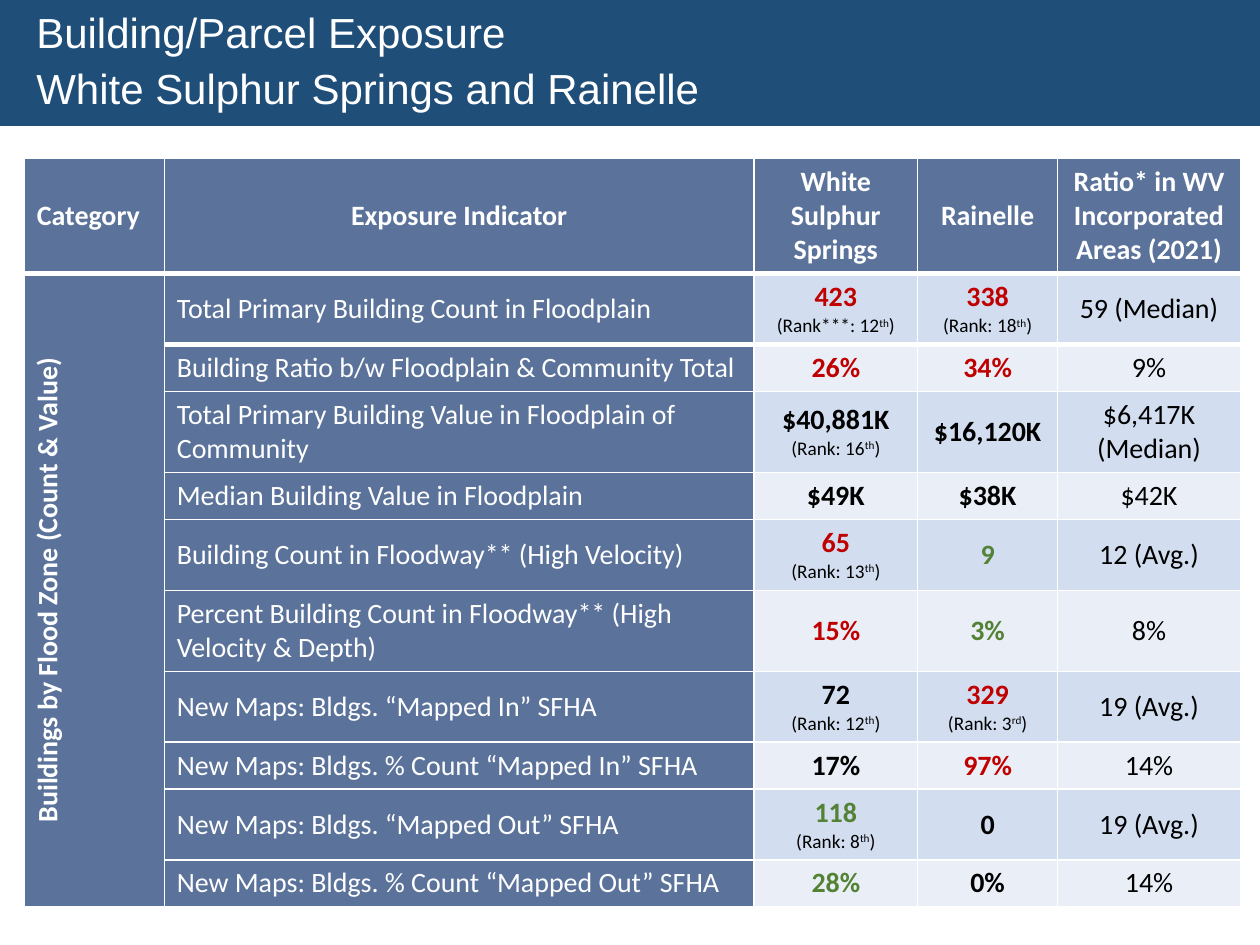
from dataclasses import dataclass

from lxml import etree
from pptx import Presentation, util as u
from pptx.dml import color
from pptx.enum import shapes, text
from pptx.oxml import ns


@dataclass(frozen=True)
class Theme:
    banner: str = "1F4E79"
    label: str = "5B739B"
    band: str = "D2DEEF"
    light: str = "EAEFF7"
    white: str = "FFFFFF"
    black: str = "000000"
    high: str = "C00000"
    low: str = "548235"
    title_size: int = 24
    body_size: int = 16
    rank_size: int = 11
    title_font: str = "Arial"
    body_font: str = "Calibri"


THEME = Theme()
NO_STYLE = "{2D5ABB26-0587-4C30-8999-92F81FD0307C}"
COLUMN_WIDTHS = (80, 337, 93.5, 80, 104.5)
HEADER_HEIGHT, RANK_HEIGHT, SINGLE_HEIGHT, DOUBLE_HEIGHT = 65.8, 40.5, 26.5, 46.3

TITLE = ("Building/Parcel Exposure", "White Sulphur Springs and Rainelle")
HEADERS = ("Category", "Exposure Indicator", "White Sulphur Springs", "Rainelle",
           "Ratio* in WV Incorporated Areas (2021)")
CATEGORY = "Buildings by Flood Zone (Count & Value)"
HIGH, LOW, PLAIN = THEME.high, THEME.low, THEME.black

# Row height, indicator, one (value, colour, rank) for each town, state ratio
INDICATORS = (
    (RANK_HEIGHT, "Total Primary Building Count in Floodplain",
     ("423", HIGH, "Rank***: 12th"), ("338", HIGH, "Rank: 18th"), "59 (Median)"),
    (SINGLE_HEIGHT, "Building Ratio b/w Floodplain & Community Total",
     ("26%", HIGH, ""), ("34%", HIGH, ""), "9%"),
    (DOUBLE_HEIGHT, "Total Primary Building Value in Floodplain of Community",
     ("$40,881K", PLAIN, "Rank: 16th"), ("$16,120K", PLAIN, ""), "$6,417K (Median)"),
    (SINGLE_HEIGHT, "Median Building Value in Floodplain",
     ("$49K", PLAIN, ""), ("$38K", PLAIN, ""), "$42K"),
    (RANK_HEIGHT, "Building Count in Floodway** (High Velocity)",
     ("65", HIGH, "Rank: 13th"), ("9", LOW, ""), "12 (Avg.)"),
    (DOUBLE_HEIGHT, "Percent Building Count in Floodway** (High Velocity & Depth)",
     ("15%", HIGH, ""), ("3%", LOW, ""), "8%"),
    (RANK_HEIGHT, "New Maps: Bldgs. “Mapped In” SFHA",
     ("72", PLAIN, "Rank: 12th"), ("329", HIGH, "Rank: 3rd"), "19 (Avg.)"),
    (SINGLE_HEIGHT, "New Maps: Bldgs. % Count “Mapped In” SFHA",
     ("17%", PLAIN, ""), ("97%", HIGH, ""), "14%"),
    (RANK_HEIGHT, "New Maps: Bldgs. “Mapped Out” SFHA",
     ("118", LOW, "Rank: 8th"), ("0", PLAIN, ""), "19 (Avg.)"),
    (SINGLE_HEIGHT, "New Maps: Bldgs. % Count “Mapped Out” SFHA",
     ("28%", LOW, ""), ("0%", PLAIN, ""), "14%"),
)


def rgb(value):
    return color.RGBColor.from_string(value)


def set_all(target, formats):
    for name, value in formats.items():
        setattr(target, name, value)


def add_span(para, words, tint, size=THEME.body_size, bold=False, font=THEME.body_font):
    span = para.add_run()
    span.text = words
    set_all(span.font, {"name": font, "size": u.Pt(size), "bold": bold})
    span.font.color.rgb = rgb(tint)
    return span


def add_rank(para, rank):
    """Write a rank in brackets with its ordinal ending raised."""
    style = {"tint": THEME.black, "size": THEME.rank_size}
    add_span(para, "(" + rank[:-2], **style)
    ending = add_span(para, rank[-2:], **style)
    ending.font._element.set("baseline", "30000")
    add_span(para, ")", **style)


def set_borders(cell, **widths):
    """Draw white lines on the named sides (L, R, T, B), widths in points."""
    properties = cell._tc.get_or_add_tcPr()
    sides = [side for side in "LRTB" if side in widths]
    for index, side in enumerate(sides):
        line = etree.Element(ns.qn("a:ln" + side), w=str(u.Pt(widths[side])))
        fill = etree.SubElement(line, ns.qn("a:solidFill"))
        etree.SubElement(fill, ns.qn("a:srgbClr"), val=THEME.white)
        properties.insert(index, line)


def style_cell(cell, fill, **borders):
    cell.fill.solid()
    cell.fill.fore_color.rgb = rgb(fill)
    cell.vertical_anchor = text.MSO_ANCHOR.MIDDLE
    set_borders(cell, L=1, R=1, **borders)


def write_cell(cell, words, tint, bold=False, centred=True, rank=""):
    paras = [cell.text_frame.paragraphs[0]]
    add_span(paras[0], words, tint, bold=bold)
    if rank:
        paras.append(cell.text_frame.add_paragraph())
        add_rank(paras[1], rank)
    for para in paras:
        para.alignment = text.PP_ALIGN.CENTER if centred else text.PP_ALIGN.LEFT


def add_banner(page, width):
    box = page.shapes.add_shape(shapes.MSO_SHAPE.RECTANGLE, 0, 0, width, u.Pt(72))
    box.shadow.inherit = False
    box.fill.solid()
    box.fill.fore_color.rgb = rgb(THEME.banner)
    box.line.fill.background()
    frame = box.text_frame
    set_all(frame, {"word_wrap": True, "vertical_anchor": text.MSO_ANCHOR.MIDDLE})
    for index, words in enumerate(TITLE):
        para = frame.add_paragraph() if index else frame.paragraphs[0]
        set_all(para, {"alignment": text.PP_ALIGN.LEFT, "line_spacing": 0.9,
                       "space_before": u.Pt(6 * index)})
        para._p.get_or_add_pPr().set("marL", str(u.Pt(13.7)))
        add_span(para, words, THEME.white, THEME.title_size, font=THEME.title_font)


def add_grid(page):
    """Add the empty table with its column widths and row heights."""
    heights = [HEADER_HEIGHT] + [row[0] for row in INDICATORS]
    frame = page.shapes.add_table(len(heights), len(COLUMN_WIDTHS), u.Pt(13.9), u.Pt(90.5),
                                  u.Pt(sum(COLUMN_WIDTHS)), u.Pt(sum(heights)))
    table = frame.table
    set_all(table, {"first_row": False, "horz_banding": False})
    table._tbl.tblPr.find(ns.qn("a:tableStyleId")).text = NO_STYLE
    for column, width in zip(table.columns, COLUMN_WIDTHS):
        column.width = u.Pt(width)
    for row, height in zip(table.rows, heights):
        row.height = u.Pt(height)
    return table


def fill_header(table):
    for column, words in enumerate(HEADERS):
        cell = table.cell(0, column)
        style_cell(cell, THEME.label, T=1, B=3)
        write_cell(cell, words, THEME.white, bold=True, centred=column > 0)


def fill_category(table):
    cell = table.cell(1, 0)
    cell.merge(table.cell(len(INDICATORS), 0))
    style_cell(cell, THEME.label, T=3, B=1)
    write_cell(cell, CATEGORY, THEME.white, bold=True)
    cell._tc.tcPr.set("vert", "vert270")


def fill_indicators(table):
    """Rows come in pairs: a banded one, then a light one closed by a line."""
    for index, (_, indicator, *towns, ratio) in enumerate(INDICATORS):
        opens_pair = index % 2 == 0
        borders = {"T": 1 if index else 3} if opens_pair else {"B": 1}
        cells = [table.cell(index + 1, column) for column in range(1, len(HEADERS))]
        fills = [THEME.label] + [THEME.band if opens_pair else THEME.light] * 3
        for cell, fill in zip(cells, fills):
            style_cell(cell, fill, **borders)
        write_cell(cells[0], indicator, THEME.white, centred=False)
        for cell, (value, tint, rank) in zip(cells[1:], towns):
            write_cell(cell, value, tint, bold=True, rank=rank)
        write_cell(cells[-1], ratio, THEME.black)


def main():
    deck = Presentation()
    set_all(deck, {"slide_width": u.Pt(720), "slide_height": u.Pt(540)})
    page = deck.slides.add_slide(deck.slide_layouts[6])
    add_banner(page, deck.slide_width)
    table = add_grid(page)
    fill_header(table)
    fill_category(table)
    fill_indicators(table)
    deck.save("out.pptx")


if __name__ == "__main__":
    main()
